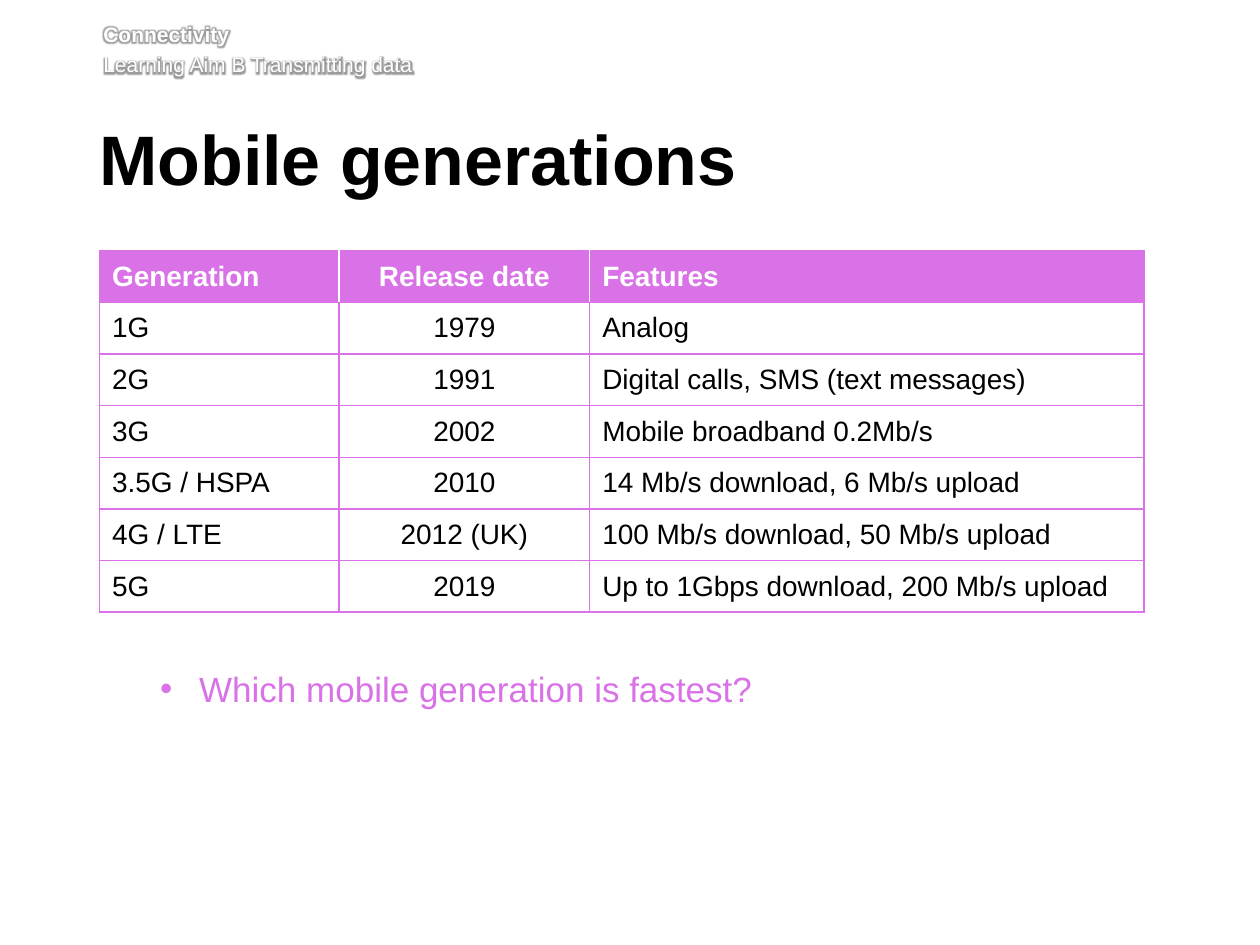
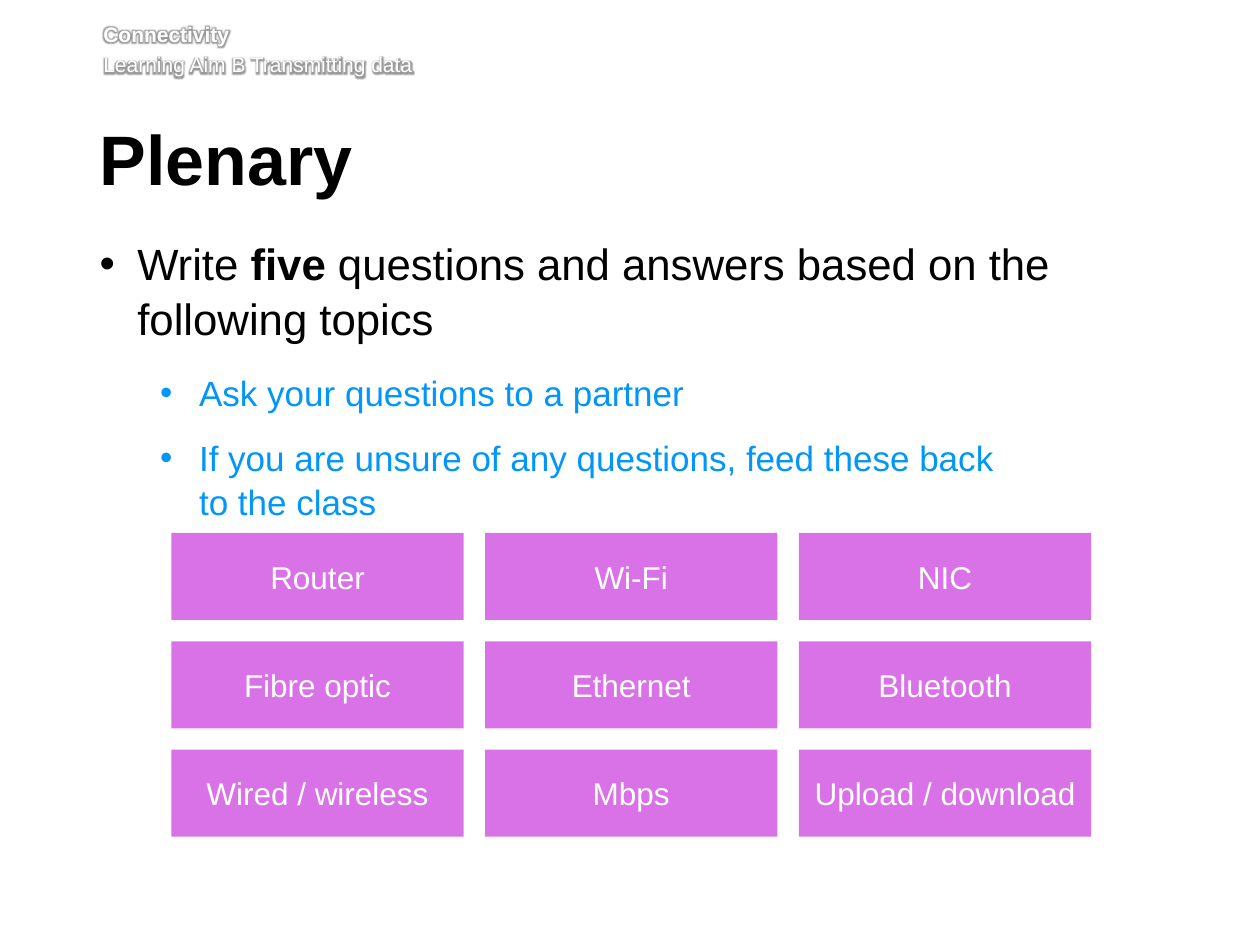
from lxml import etree
from pptx import Presentation, util as u
from pptx.dml.color import RGBColor
from pptx.enum import shapes, text
from pptx.oxml import parse_xml
from pptx.oxml.ns import nsdecls, qn

COLOURS = {"pink": "D972E7", "blue": "0296F8", "black": "000000", "white": "FFFFFF"}
LEFT = 0.79
TITLES = ["Mobile generations", "Plenary"]
HEADER = ["Connectivity", "Learning Aim B Transmitting data"]
GENERATIONS = [
    ("Generation", "Release date", "Features"),
    ("1G", "1979", "Analog"),
    ("2G", "1991", "Digital calls, SMS (text messages)"),
    ("3G", "2002", "Mobile broadband 0.2Mb/s"),
    ("3.5G / HSPA", "2010", "14 Mb/s download, 6 Mb/s upload"),
    ("4G / LTE", "2012 (UK)", "100 Mb/s download, 50 Mb/s upload"),
    ("5G", "2019", "Up to 1Gbps download, 200 Mb/s upload"),
]
COLUMN_WIDTHS = [1.9, 1.99, 4.4]
ROW_HEIGHT = 0.41
# Per slide: top and height of the bullet box, then (level, colour, [(words, bold)])
BULLETS = [
    (5.28, 0.5, [(1, "pink", [("Which mobile generation is fastest?", False)])]),
    (1.86, 2.3, [
        (0, "black", [("Write ", False), ("five", True),
                      (" questions and answers based on the following topics", False)]),
        (1, "blue", [("Ask your questions to a partner", False)]),
        (1, "blue", [("If you are unsure of any questions, feed these back\vto the class", False)]),
    ]),
]
# Per level: text size, left margin, hanging indent, space after
LEVELS = [(25, 0.3, 0.3, 14), (20, LEFT, 0.31, 12)]
TOPICS = [
    ("Router", "Wi-Fi", "NIC"),
    ("Fibre optic", "Ethernet", "Bluetooth"),
    ("Wired / wireless", "Mbps", "Upload / download"),
]


def style(paragraph, size, colour, bold=False):
    font = paragraph.font
    font.name, font.size, font.bold = "Arial", u.Pt(size), bold
    font.color.rgb = RGBColor.from_string(COLOURS[colour])


def add_text_box(page, left, top, width, height, top_inset=0, right_inset=0.1):
    """Add a wrapping text box with no left inset and return its text frame."""
    box = page.shapes.add_textbox(u.Inches(left), u.Inches(top), u.Inches(width), u.Inches(height))
    frame = box.text_frame
    frame.word_wrap = True
    frame.margin_left = 0
    frame.margin_top, frame.margin_right = u.Inches(top_inset), u.Inches(right_inset)
    return frame


deck = Presentation()
deck.slide_width, deck.slide_height = u.Inches(10), u.Inches(7.5)

# Header, title and bullets on every slide
for title, (top, height, bullets) in zip(TITLES, BULLETS):
    page = deck.slides.add_slide(deck.slide_layouts[6])

    frame = add_text_box(page, 0.82, 0.17, 8.82, 0.49, right_inset=0)
    frame.text = "\n".join(HEADER)
    for index, para in enumerate(frame.paragraphs):
        style(para, 12, "white", bold=index == 0)
        if index:
            para.space_before = u.Pt(2.9)
        para.runs[0]._r.get_or_add_rPr().append(parse_xml(
            f'<a:effectLst {nsdecls("a")}><a:glow rad="63500"><a:srgbClr val="{COLOURS["black"]}">'
            '<a:alpha val="40000"/></a:srgbClr></a:glow></a:effectLst>'))

    frame = add_text_box(page, LEFT, 0.99, 8.55, 0.73, top_inset=0.05)
    frame.text = title
    frame.paragraphs[0].line_spacing = u.Pt(39)
    style(frame.paragraphs[0], 40, "black", bold=True)

    frame = add_text_box(page, LEFT, top, 8.53, height)
    for index, (level, colour, spans) in enumerate(bullets):
        size, margin, hanging, after = LEVELS[level]
        para = frame.add_paragraph() if index else frame.paragraphs[0]
        para.level = level
        para.line_spacing, para.space_after = 1.05, u.Pt(after)
        properties = para._p.get_or_add_pPr()
        properties.set("marL", str(u.Inches(margin)))
        properties.set("indent", str(-u.Inches(hanging)))
        etree.SubElement(properties, qn("a:buFont"), typeface="Arial")
        etree.SubElement(properties, qn("a:buChar"), char="•")
        style(para, size, colour)
        for words, bold in spans:
            for part, line in enumerate(words.split("\v")):
                if part:
                    para.add_line_break()
                span = para.add_run()
                span.text = line
                if bold:
                    span.font.bold = True

generations_page, plenary_page = deck.slides

# Table of mobile generations
table = generations_page.shapes.add_table(
    len(GENERATIONS), len(COLUMN_WIDTHS), u.Inches(LEFT), u.Inches(1.99),
    u.Inches(sum(COLUMN_WIDTHS)), u.Inches(ROW_HEIGHT * len(GENERATIONS))).table
table.first_row = table.horz_banding = False
for column, width in zip(table.columns, COLUMN_WIDTHS):
    column.width = u.Inches(width)
last_column = len(COLUMN_WIDTHS) - 1
for row, values in enumerate(GENERATIONS):
    table.rows[row].height = u.Inches(ROW_HEIGHT)
    heading = row == 0
    for column, value in enumerate(values):
        cell = table.cell(row, column)
        cell.text = value
        cell.vertical_anchor = text.MSO_ANCHOR.MIDDLE
        cell.fill.solid()
        cell.fill.fore_color.rgb = RGBColor.from_string(COLOURS["pink" if heading else "white"])
        para = cell.text_frame.paragraphs[0]
        para.alignment = text.PP_ALIGN.CENTER if column == 1 else text.PP_ALIGN.LEFT
        style(para, 16, "white" if heading else "black", bold=heading)
        white_sides = {"L": heading and column > 0, "R": heading and column < last_column}
        for position, side in enumerate("LRTB"):
            colour = COLOURS["white" if white_sides.get(side) else "pink"]
            cell._tc.get_or_add_tcPr().insert(position, parse_xml(
                f'<a:ln{side} {nsdecls("a")} w="{u.Pt(1)}"><a:solidFill>'
                f'<a:srgbClr val="{colour}"/></a:solidFill></a:ln{side}>'))

# Grid of plenary topics
for row, names in enumerate(TOPICS):
    for column, name in enumerate(names):
        box = plenary_page.shapes.add_shape(
            shapes.MSO_SHAPE.RECTANGLE, u.Inches(1.36 + 2.49 * column),
            u.Inches(4.23 + 0.86 * row), u.Inches(2.32), u.Inches(0.69))
        box.shadow.inherit = False
        box.fill.solid()
        box.fill.fore_color.rgb = RGBColor.from_string(COLOURS["pink"])
        box.line.fill.background()
        frame = box.text_frame
        frame.text = name
        frame.word_wrap = True
        frame.vertical_anchor = text.MSO_ANCHOR.MIDDLE
        frame.paragraphs[0].alignment = text.PP_ALIGN.CENTER
        style(frame.paragraphs[0], 18, "white")

deck.save("out.pptx")
